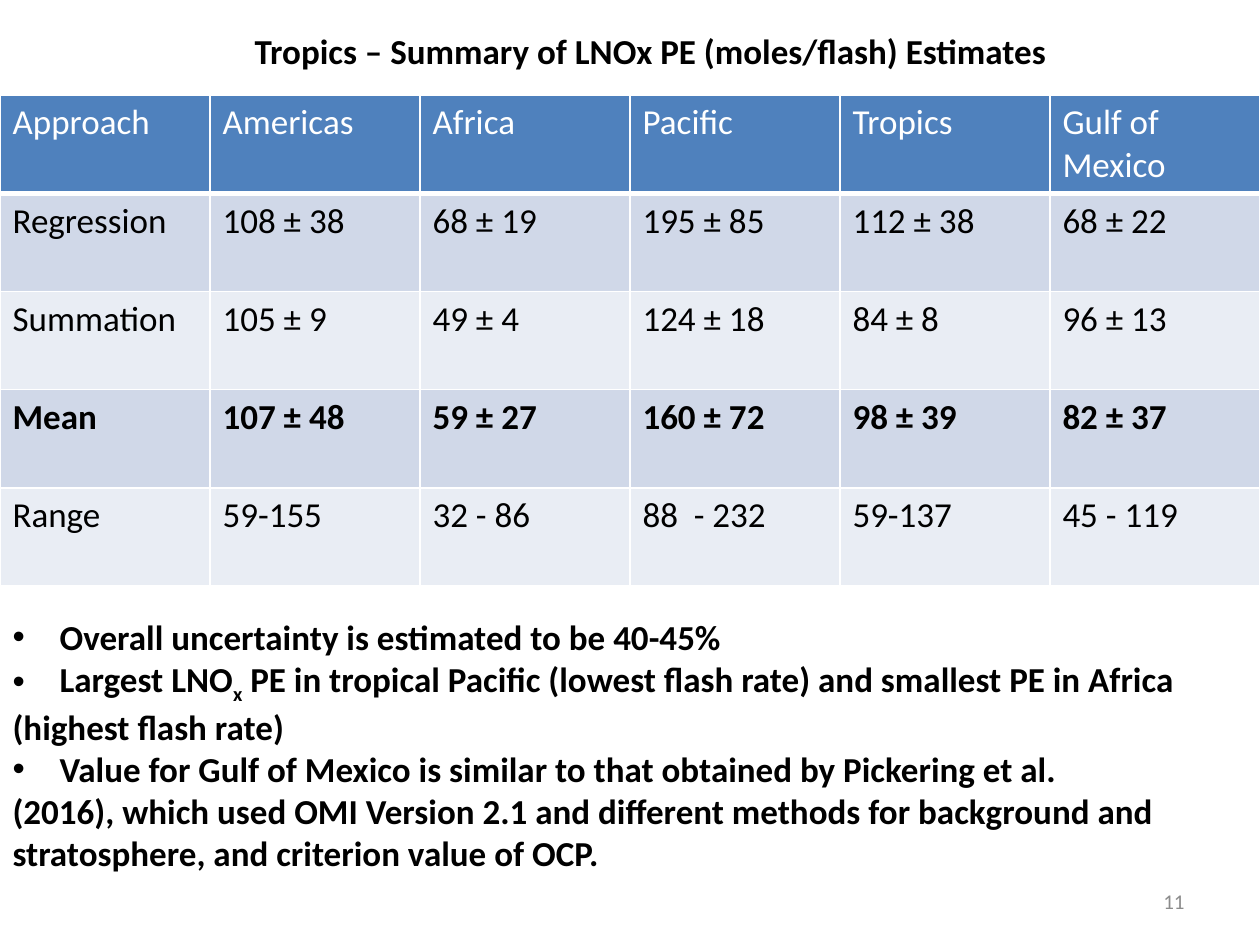
from dataclasses import dataclass

from lxml.etree import SubElement
from pptx import Presentation
from pptx.dml.color import RGBColor
from pptx.enum.text import MSO_ANCHOR as Anchor, MSO_AUTO_SIZE as AutoSize, PP_ALIGN as Align
from pptx.oxml import parse_xml
from pptx.oxml.ns import nsdecls, qn
from pptx.util import Emu, Pt

EMU_PER_PX = 914400 / 126
FONT = "Calibri"
COLORS = {
    "text": "000000",
    "header": "4F81BD",
    "odd_band": "D0D8E8",
    "even_band": "E9EDF4",
    "white": "FFFFFF",
    "number": "8C8C8C",
}


@dataclass(frozen=True)
class Area:
    left: int
    top: int
    width: int
    height: int

    def emu(self) -> tuple:
        return tuple(px(n) for n in (self.left, self.top, self.width, self.height))


@dataclass(frozen=True)
class EstimateRow:
    values: tuple
    fill: str
    color: str = "text"
    bold: bool = False


@dataclass(frozen=True)
class Line:
    wording: tuple
    bullet: bool = False


TABLE_AREA = Area(0, 95, 1260, 491)
TITLE_AREA = Area(242, 23, 824, 55)
FINDINGS_AREA = Area(0, 609, 1206, 267)
NUMBER_AREA = Area(903, 876, 294, 50)
BULLET_INDENT = 47

ROWS = (
    EstimateRow(("Approach", "Americas", "Africa", "Pacific", "Tropics", "Gulf of Mexico"),
                "header", "white"),
    EstimateRow(("Regression", "108 ± 38", "68 ± 19", "195 ± 85", "112 ± 38", "68 ± 22"),
                "odd_band"),
    EstimateRow(("Summation", "105 ± 9", "49 ± 4", "124 ± 18", "84 ± 8", "96 ± 13"),
                "even_band"),
    EstimateRow(("Mean", "107 ± 48", "59 ± 27", "160 ± 72", "98 ± 39", "82 ± 37"),
                "odd_band", bold=True),
    EstimateRow(("Range", "59-155", "32 - 86", "88  - 232", "59-137", "45 - 119"),
                "even_band"),
)
FINDINGS = (
    Line(("Overall uncertainty is estimated to be 40-45%",), True),
    Line(("Largest LNO", "x",
          " PE in tropical Pacific (lowest flash rate) and smallest PE in Africa"), True),
    Line(("(highest flash rate)",)),
    Line(("Value for Gulf of Mexico is similar to that obtained by Pickering et al.",), True),
    Line(("(2016), which used OMI Version 2.1 and different methods for background and",)),
    Line(("stratosphere, and criterion value of OCP.",)),
)


def px(length: int) -> Emu:
    return Emu(round(length * EMU_PER_PX))


def color(name: str) -> RGBColor:
    return RGBColor.from_string(COLORS[name])


def format_font(font, tint: str, bold: bool, size: int = 20) -> None:
    font.name = FONT
    font.size = Pt(size)
    font.bold = bold
    font.color.rgb = color(tint)


def place(shape, area: Area, anchor: Anchor):
    shape.left, shape.top, shape.width, shape.height = area.emu()
    frame = shape.text_frame
    frame.word_wrap = True
    frame.auto_size = AutoSize.NONE
    frame.vertical_anchor = anchor
    return frame


def set_borders(cell, bottom: int) -> None:
    properties = cell._tc.get_or_add_tcPr()
    for position, (side, width) in enumerate((("L", 1), ("R", 1), ("T", 1), ("B", bottom))):
        properties.insert(position, parse_xml(
            f'<a:ln{side} {nsdecls("a")} w="{int(Pt(width))}"><a:solidFill>'
            f'<a:srgbClr val="{COLORS["white"]}"/></a:solidFill></a:ln{side}>'))


def add_estimates(page) -> None:
    table = page.shapes.add_table(len(ROWS), len(ROWS[0].values), *TABLE_AREA.emu()).table
    for row_index, row in enumerate(ROWS):
        for column_index, value in enumerate(row.values):
            cell = table.cell(row_index, column_index)
            cell.text = value
            cell.fill.solid()
            cell.fill.fore_color.rgb = color(row.fill)
            format_font(cell.text_frame.paragraphs[0].runs[0].font, row.color, row.bold)
            set_borders(cell, 3 if row_index == 0 else 1)


def set_bullet(para, bullet: bool) -> None:
    properties = para._p.get_or_add_pPr()
    indent = int(px(BULLET_INDENT)) if bullet else 0
    properties.set("marL", str(indent))
    properties.set("indent", str(-indent))
    if bullet:
        SubElement(properties, qn("a:buFont")).set("typeface", "Arial")
        SubElement(properties, qn("a:buChar")).set("char", "•")
    else:
        SubElement(properties, qn("a:buNone"))


def add_findings(frame) -> None:
    for index, line in enumerate(FINDINGS):
        para = frame.add_paragraph() if index else frame.paragraphs[0]
        para.space_before = Pt(0)
        set_bullet(para, line.bullet)
        for words in line.wording:
            span = para.add_run()
            span.text = words
            format_font(span.font, "text", True)
            if words == "x":
                span.font._element.set("baseline", "-25000")


def add_line(frame, text: str, align: Align, tint: str, bold: bool, size: int) -> None:
    frame.text = text
    para = frame.paragraphs[0]
    para.alignment = align
    format_font(para.runs[0].font, tint, bold, size)


def main() -> None:
    deck = Presentation()
    deck.slide_width, deck.slide_height = px(1260), px(945)
    page = deck.slides.add_slide(deck.slide_layouts[1])
    add_estimates(page)
    title = place(page.shapes.title, TITLE_AREA, Anchor.TOP)
    add_line(title, "Tropics – Summary of LNOx PE (moles/flash) Estimates",
             Align.LEFT, "text", True, 20)
    add_findings(place(page.placeholders[1], FINDINGS_AREA, Anchor.TOP))
    number_box = page.shapes.add_textbox(*NUMBER_AREA.emu())
    number = place(number_box, NUMBER_AREA, Anchor.MIDDLE)
    add_line(number, "11", Align.RIGHT, "number", False, 12)
    deck.save("out.pptx")


if __name__ == "__main__":
    main()
